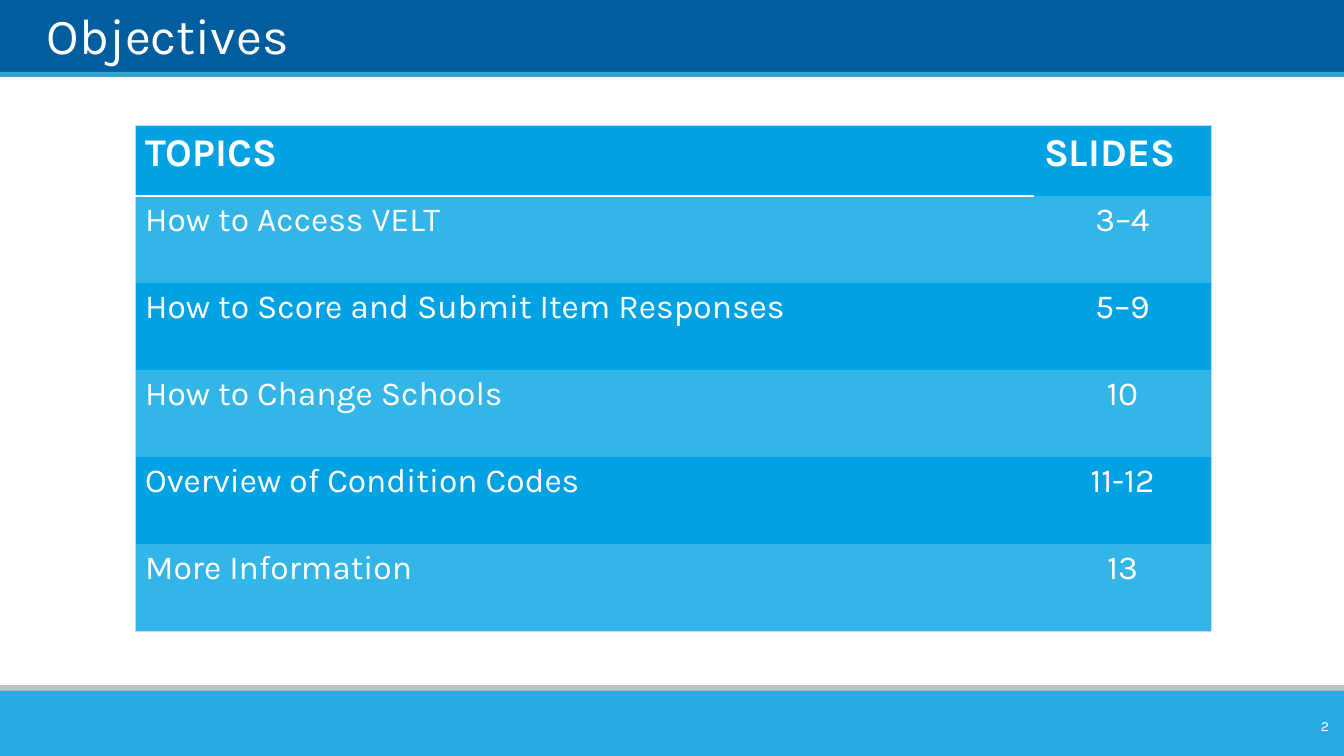
from lxml.etree import SubElement
from pptx import Presentation
from pptx.dml.color import RGBColor
from pptx.enum.shapes import MSO_SHAPE
from pptx.enum.text import MSO_ANCHOR, PP_ALIGN
from pptx.oxml.ns import qn
from pptx.util import Emu, Pt

SLIDE_WIDTH, SLIDE_HEIGHT = 1344, 756
EMU_PER_PX = 12192000 / SLIDE_WIDTH
FONT = "Karla"
NO_GRID_STYLE = "{2D5ABB26-0587-4C30-8999-92F81FD0307C}"
COLORS = {
    "title band": "005E9E",
    "title rule": "35A0CE",
    "footer rule": "BFBFBF",
    "footer band": "27AAE1",
    "row": "00A2E3",
    "light row": "33B5E8",
    "outline": "BDD7F0",
    "white": "FFFFFF",
}
BANDS = [
    ("title band", -1, 76),
    ("title rule", 72, 5),
    ("footer rule", 685, 14),
    ("footer band", 691, 65),
]
TOPICS = [
    ("TOPICS", "SLIDES"),
    ("How to Access VELT", "3–4"),
    ("How to Score and Submit Item Responses", "5–9"),
    ("How to Change Schools", "10"),
    ("Overview of Condition Codes", "11-12"),
    ("More Information", "13"),
]
COLUMN_WIDTHS = [899, 177]
HEADER_HEIGHT, ROW_HEIGHT = 71, 87


def px(length):
    return Emu(round(length * EMU_PER_PX))


def place(shape, left, top, width, height):
    shape.left, shape.top = px(left), px(top)
    shape.width, shape.height = px(width), px(height)


def write(text_frame, text, size, bold=False, align=PP_ALIGN.LEFT):
    text_frame.text = text
    paragraph = text_frame.paragraphs[0]
    paragraph.alignment = align
    font = paragraph.runs[0].font
    font.name, font.size, font.bold = FONT, Pt(size), bold
    font.color.rgb = RGBColor.from_string(COLORS["white"])


def add_band(slide, color, top, height):
    band = slide.shapes.add_shape(
        MSO_SHAPE.RECTANGLE, 0, px(top), px(SLIDE_WIDTH), px(height))
    band.shadow.inherit = False
    band.fill.solid()
    band.fill.fore_color.rgb = RGBColor.from_string(COLORS[color])
    band.line.fill.background()
    return band


def set_title(slide, text, band):
    """Fill the title and lift it in front of the given band."""
    title = slide.shapes.title
    band.element.addnext(title.element)
    place(title, 47, 7, 1253, 58)
    frame = title.text_frame
    frame.margin_left = frame.margin_right = 0
    frame.margin_top = frame.margin_bottom = 0
    frame.vertical_anchor = MSO_ANCHOR.BOTTOM
    write(frame, text, 36)


def add_border(cell, side, color, width):
    properties = cell._tc.get_or_add_tcPr()
    line = SubElement(properties, qn(f"a:ln{side}"), w=str(Pt(width)))
    fill = SubElement(line, qn("a:solidFill"))
    SubElement(fill, qn("a:srgbClr"), val=COLORS[color])


def outline_cell(cell, row, column):
    """Draw the table's outer edge and the rule under the topic heading."""
    last_row, last_column = len(TOPICS) - 1, len(COLUMN_WIDTHS) - 1
    edges = [("L", column == 0), ("R", column == last_column),
             ("T", row == 0), ("B", row == last_row)]
    for side, is_outer in edges:
        if is_outer:
            add_border(cell, side, "outline", 0.5)
    if row == 0 and column == 0:
        add_border(cell, "B", "white", 1.5)


def add_topics_table(slide, left, top):
    height = HEADER_HEIGHT + ROW_HEIGHT * (len(TOPICS) - 1)
    frame = slide.shapes.add_table(
        len(TOPICS), len(COLUMN_WIDTHS),
        px(left), px(top), px(sum(COLUMN_WIDTHS)), px(height))
    table = frame.table
    table.horz_banding = False
    next(frame.element.iter(qn("a:tableStyleId"))).text = NO_GRID_STYLE
    for column, width in enumerate(COLUMN_WIDTHS):
        table.columns[column].width = px(width)
    for row, texts in enumerate(TOPICS):
        is_header = row == 0
        table.rows[row].height = px(HEADER_HEIGHT if is_header else ROW_HEIGHT)
        for column, text in enumerate(texts):
            cell = table.cell(row, column)
            outline_cell(cell, row, column)
            color = "light row" if row % 2 else "row"
            cell.fill.solid()
            cell.fill.fore_color.rgb = RGBColor.from_string(COLORS[color])
            centered = column == 1 and not is_header
            write(cell.text_frame, text, 28 if is_header else 24, is_header,
                  PP_ALIGN.CENTER if centered else PP_ALIGN.LEFT)


def add_slide_number(slide, number):
    box = slide.shapes.add_textbox(px(1261), px(711), px(78), px(30))
    box.text_frame.word_wrap = True
    box.text_frame.vertical_anchor = MSO_ANCHOR.MIDDLE
    write(box.text_frame, number, 10, align=PP_ALIGN.RIGHT)


def main():
    presentation = Presentation()
    presentation.slide_width = px(SLIDE_WIDTH)
    presentation.slide_height = px(SLIDE_HEIGHT)
    slide = presentation.slides.add_slide(presentation.slide_layouts[5])
    bands = [add_band(slide, *band) for band in BANDS]
    set_title(slide, "Objectives", bands[-1])
    add_topics_table(slide, 135, 125)
    add_slide_number(slide, "2")
    presentation.save("out.pptx")


if __name__ == "__main__":
    main()
